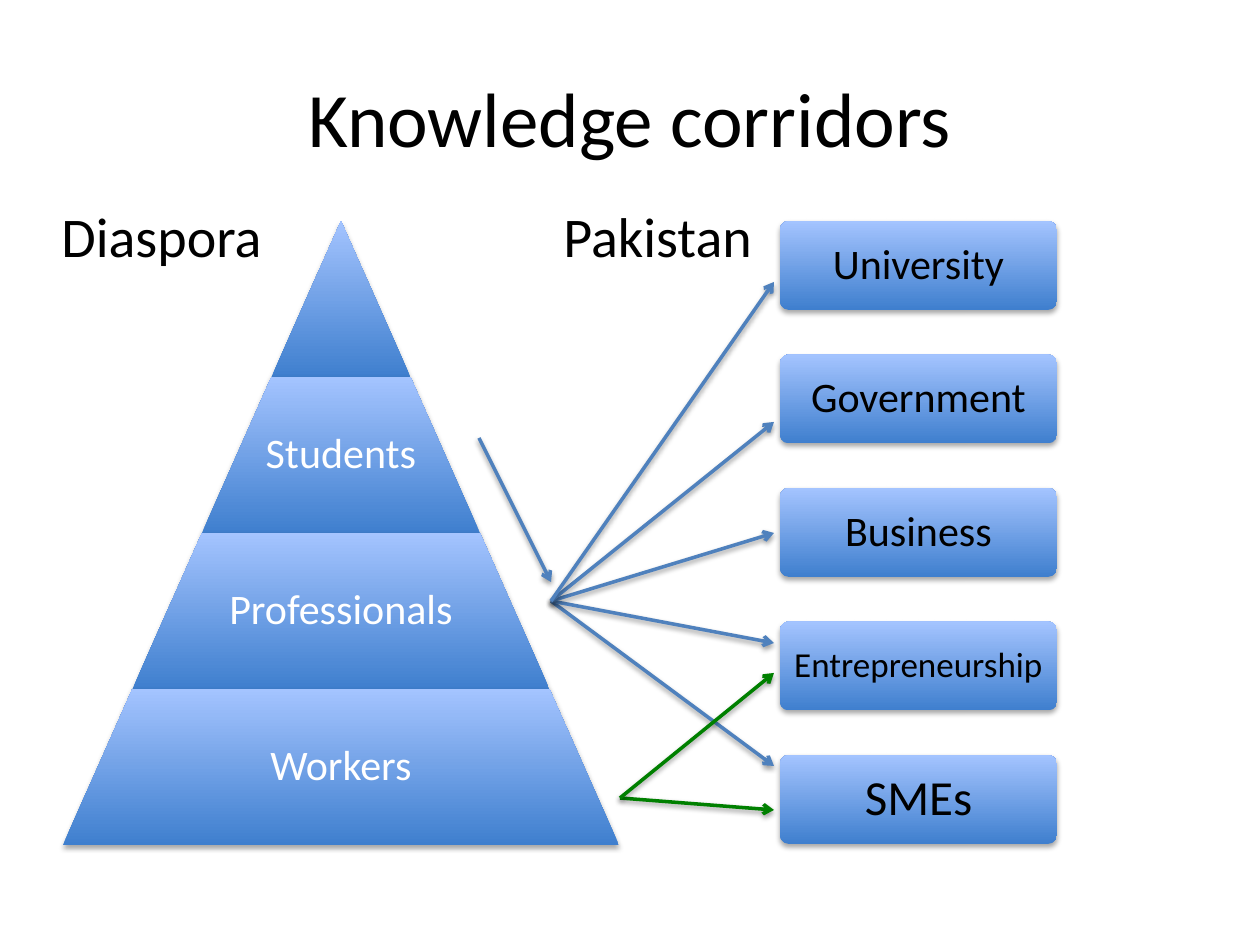
from lxml.etree import SubElement
from pptx import Presentation
from pptx.dml.color import RGBColor
from pptx.enum.shapes import MSO_CONNECTOR, MSO_SHAPE
from pptx.enum.text import MSO_ANCHOR, PP_ALIGN
from pptx.oxml.ns import qn
from pptx.util import Pt

EMU_PER_PX = 914400 / 126
BLACK = RGBColor(0x00, 0x00, 0x00)
WHITE = RGBColor(0xFF, 0xFF, 0xFF)
GRADIENT_DARK = RGBColor(0x3F, 0x7F, 0xCE)
GRADIENT_LIGHT = RGBColor(0xA4, 0xC4, 0xFF)
BLUE = RGBColor(0x4F, 0x81, 0xBD)
GREEN = RGBColor(0x00, 0x80, 0x00)

DIAGRAM_TOP, DIAGRAM_BOTTOM = 221, 844
TIERS = ["", "Students", "Professionals", "Workers"]
PYRAMID_CENTER, TIER_HEIGHT, TIER_STEP = 341, 156, 139
SECTORS = [("University", 24), ("Government", 24), ("Business", 24),
           ("Entrepreneurship", 20), ("SMEs", 28)]
SECTOR_LEFT, SECTOR_WIDTH, SECTOR_HEIGHT = 780, 277, 89

ARROW_END = 774
PROFESSIONALS_EXIT, PROFESSIONALS_TARGETS = (551, 601), [766, 643, 533, 422, 282]
WORKERS_EXIT, WORKERS_TARGETS = (620, 798), [810, 673]


def px(*lengths):
    return [round(length * EMU_PER_PX) for length in lengths]


def write(frame, text, size, color=BLACK, align=PP_ALIGN.CENTER,
          anchor=MSO_ANCHOR.MIDDLE, wrap=False, spacing=0.9):
    frame.word_wrap = wrap
    frame.vertical_anchor = anchor
    paragraph = frame.paragraphs[0]
    paragraph.alignment = align
    paragraph.line_spacing = spacing
    run = paragraph.add_run()
    run.text = text
    run.font.name = "Calibri"
    run.font.size = Pt(size)
    run.font.color.rgb = color


def add_label(slide, box, text, size, **text_format):
    label = slide.shapes.add_textbox(*px(*box))
    write(label.text_frame, text, size, **text_format)


def add_shadow(shape, opacity, distance):
    """Drop a soft black shadow straight down; fill and line must be set first."""
    effects = SubElement(shape._element.spPr, qn("a:effectLst"))
    shadow = SubElement(effects, qn("a:outerShdw"), blurRad=str(Pt(3.1)),
                        dist=str(Pt(distance)), dir="5400000", rotWithShape="0")
    color = SubElement(shadow, qn("a:srgbClr"), val=str(BLACK))
    SubElement(color, qn("a:alpha"), val=str(opacity * 1000))


def add_gradient_shape(slide, preset, box, adjustment):
    shape = slide.shapes.add_shape(preset, *px(*box))
    shape.adjustments[0] = adjustment
    shape.fill.gradient()
    shape.fill.gradient_angle = 90
    for stop, color, position in zip(shape.fill.gradient_stops,
                                     (GRADIENT_DARK, GRADIENT_LIGHT), (0, 1)):
        stop.color.rgb = color
        stop.position = position
    shape.line.fill.background()
    add_shadow(shape, 35, 1.8)
    return shape


def add_arrow(slide, start, end, color):
    arrow = slide.shapes.add_connector(MSO_CONNECTOR.STRAIGHT, *px(*start, *end))
    arrow.line.color.rgb = color
    arrow.line.width = Pt(2)
    SubElement(arrow.line._get_or_add_ln(), qn("a:tailEnd"), type="arrow")
    add_shadow(arrow, 38, 1.6)


def add_pyramid(slide):
    for level, name in enumerate(TIERS):
        width = TIER_STEP * (level + 1)
        box = (PYRAMID_CENTER - width / 2, DIAGRAM_TOP + level * TIER_HEIGHT,
               width, TIER_HEIGHT)
        slant = TIER_STEP / 2 / min(width, TIER_HEIGHT)
        add_gradient_shape(slide, MSO_SHAPE.TRAPEZOID, box, slant)
        if name:
            add_label(slide, box, name, 24, color=WHITE)


def add_sectors(slide):
    pitch = (DIAGRAM_BOTTOM - DIAGRAM_TOP - SECTOR_HEIGHT) / (len(SECTORS) - 1)
    for row, (name, size) in enumerate(SECTORS):
        box = (SECTOR_LEFT, DIAGRAM_TOP + row * pitch, SECTOR_WIDTH, SECTOR_HEIGHT)
        sector = add_gradient_shape(slide, MSO_SHAPE.ROUNDED_RECTANGLE, box, 0.1)
        write(sector.text_frame, name, size)


def add_corridors(slide):
    for start, targets, color in ((PROFESSIONALS_EXIT, PROFESSIONALS_TARGETS, BLUE),
                                  (WORKERS_EXIT, WORKERS_TARGETS, GREEN)):
        for target in targets:
            add_arrow(slide, start, (ARROW_END, target), color)
    add_arrow(slide, (479, 438), (551, 582), BLUE)


def main():
    presentation = Presentation()
    presentation.slide_width, presentation.slide_height = px(1260, 945)
    slide = presentation.slides.add_slide(presentation.slide_layouts[6])
    add_label(slide, (63, 38, 1134, 157), "Knowledge corridors", 44,
              wrap=True, spacing=1.0)
    add_pyramid(slide)
    add_sectors(slide)
    add_corridors(slide)
    for heading, left, width in (("Diaspora", 49, 229), ("Pakistan", 551, 218)):
        add_label(slide, (left, 195, width, 81), heading, 32, align=PP_ALIGN.LEFT,
                  anchor=MSO_ANCHOR.TOP, spacing=1.0)
    presentation.save("out.pptx")


if __name__ == "__main__":
    main()
